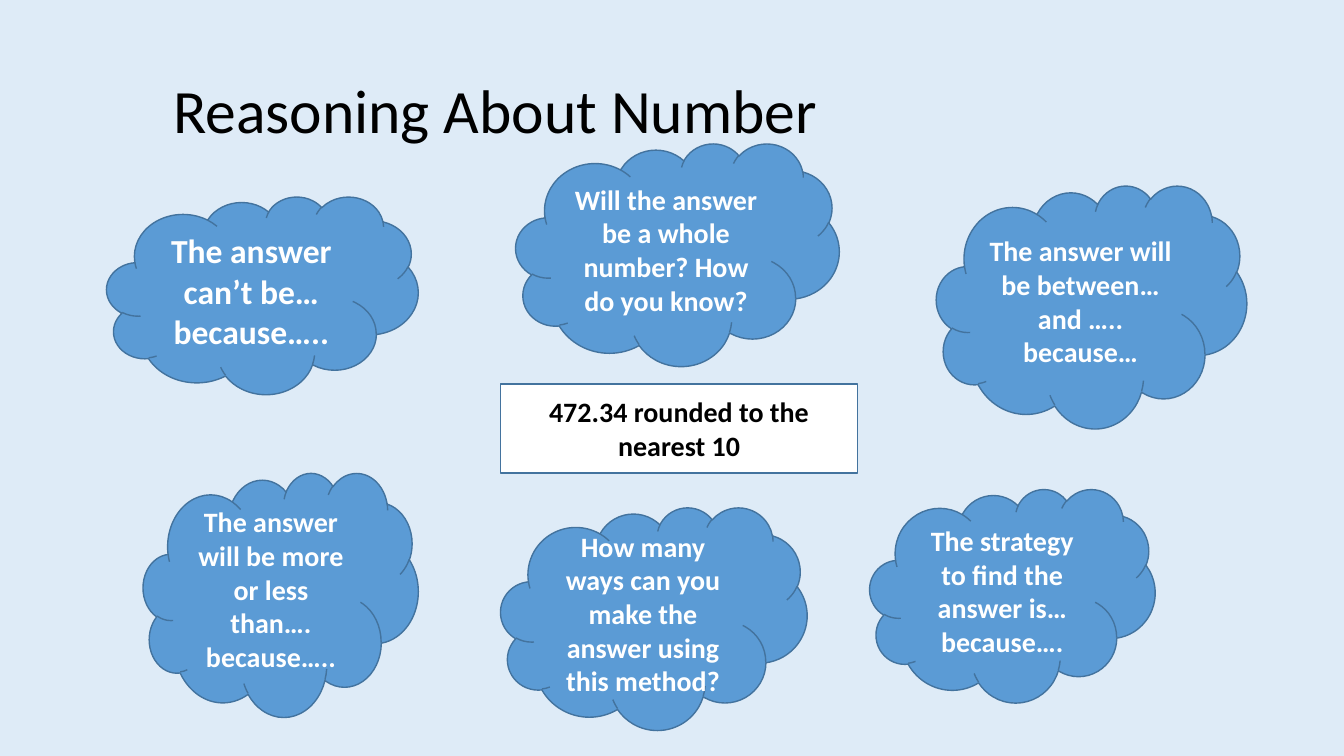
from pptx import Presentation
from pptx.dml.color import RGBColor
from pptx.enum.shapes import MSO_SHAPE as Preset
from pptx.enum.text import MSO_ANCHOR as Anchor, MSO_AUTO_SIZE as AutoSize, PP_ALIGN as Align
from pptx.util import Cm, Pt

TITLE = "Reasoning About Number"
TITLE_BOX = (4.11, 1.02, 27.43, 3.68)
QUESTION = ["472.34 rounded to the nearest 10"]
QUESTION_BOX = (12.62, 9.68, 8.99, 2.24)
CLOUDS = [
    ((2.69, 4.95, 7.85, 4.98), 24, ["The answer can’t be…", "because….."]),
    ((23.6, 4.67, 7.82, 6.12), 20, ["The answer will be between… and ….. because…"]),
    ((3.61, 11.91, 6.93, 6.15), 20, ["The answer will be more or less than….", "because….."]),
    ((13.0, 3.61, 8.15, 5.61), 20, ["Will the answer be a whole number? How do you know?"]),
    ((21.92, 12.32, 7.19, 5.38), 20, ["The strategy to find the answer is… because…."]),
    ((12.62, 12.78, 7.72, 5.61), 20, ["How many ways can you make the answer using this method?"]),
]
BACKGROUND, BLUE, OUTLINE = "DEEBF7", "5B9BD5", "43739E"
WHITE, BLACK = "FFFFFF", "000000"


def paint(color_format, color):
    color_format.rgb = RGBColor.from_string(color)


def write(shape, lines, size, color, bold=False, align=Align.CENTER, spacing=1.0):
    frame = shape.text_frame
    frame.word_wrap = True
    frame.auto_size = AutoSize.NONE
    frame.vertical_anchor = Anchor.MIDDLE
    frame.text = "\n".join(lines)
    for paragraph in frame.paragraphs:
        paragraph.alignment = align
        paragraph.line_spacing = spacing
        font = paragraph.font
        font.name, font.size, font.bold = "Calibri", Pt(size), bold
        paint(font.color, color)


def add_panel(slide, preset, box, fill):
    shape = slide.shapes.add_shape(preset, *map(Cm, box))
    shape.shadow.inherit = False
    shape.fill.solid()
    paint(shape.fill.fore_color, fill)
    paint(shape.line.color, OUTLINE)
    shape.line.width = Pt(1)
    return shape


def main():
    presentation = Presentation()
    presentation.slide_width, presentation.slide_height = Cm(33.87), Cm(19.05)
    slide = presentation.slides.add_slide(presentation.slide_layouts[5])
    slide.background.fill.solid()
    paint(slide.background.fill.fore_color, BACKGROUND)

    title = slide.shapes.title
    title.left, title.top, title.width, title.height = map(Cm, TITLE_BOX)
    write(title, [TITLE], 44, BLACK, align=Align.LEFT, spacing=0.9)

    for box, size, lines in CLOUDS:
        write(add_panel(slide, Preset.CLOUD, box, BLUE), lines, size, WHITE, bold=True)
    write(add_panel(slide, Preset.RECTANGLE, QUESTION_BOX, WHITE), QUESTION, 20, BLACK, bold=True)

    presentation.save("out.pptx")


if __name__ == "__main__":
    main()
